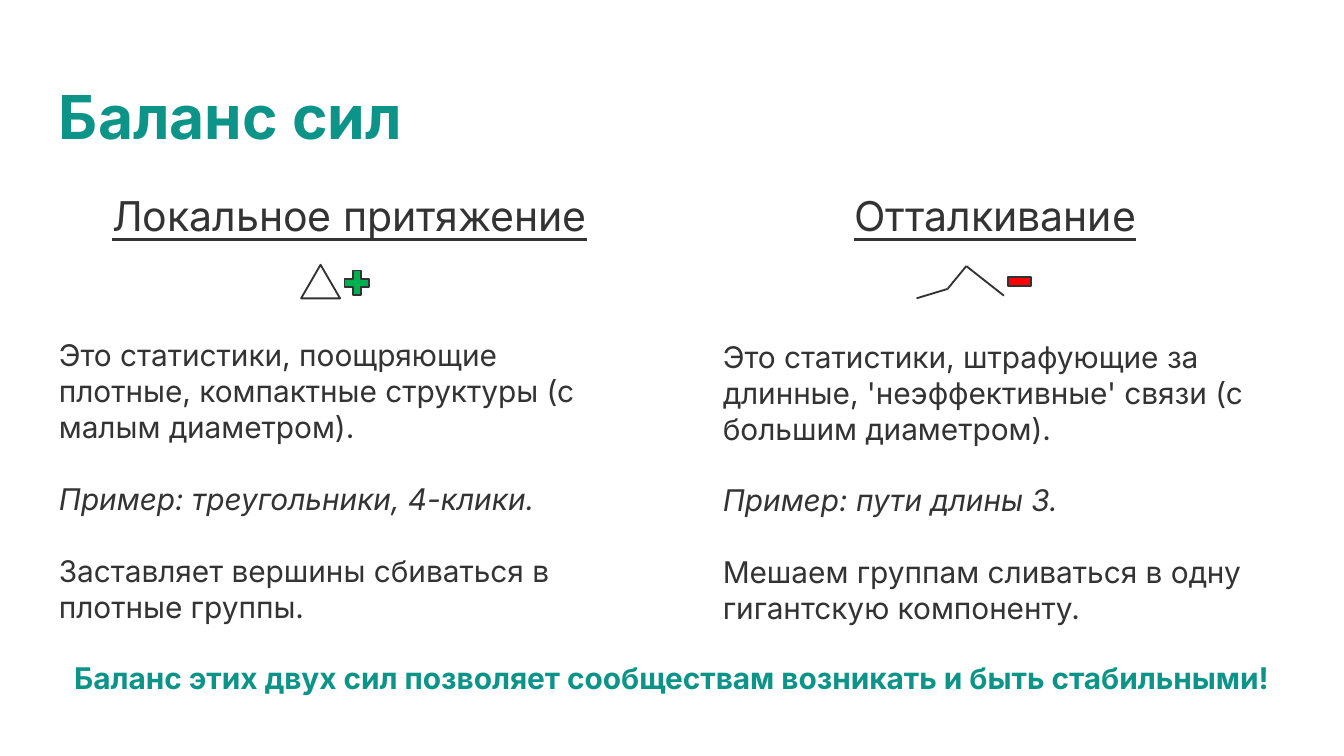
import itertools

import pptx
import pptx.dml.color
import pptx.enum.shapes
import pptx.enum.text
import pptx.oxml.ns
import pptx.util
from lxml import etree

Inches = pptx.util.Inches
RGBColor = pptx.dml.color.RGBColor
SHAPE = pptx.enum.shapes.MSO_SHAPE
CENTER = pptx.enum.text.PP_ALIGN.CENTER

TEAL = RGBColor(0x0D, 0x94, 0x88)
INK = RGBColor(0x33, 0x33, 0x33)
GREEN = RGBColor(0x00, 0xB0, 0x50)
RED = RGBColor(0xFF, 0x00, 0x00)

FONT = "Inter"
BODY_SIZE = 16
BLANK_LINE = 19.36
LEFT, WIDTH = 0.34, 9.32


def add_text(slide, box, texts, size, color, inset=0.1):
    text_box = slide.shapes.add_textbox(*map(Inches, box))
    frame = text_box.text_frame
    frame.word_wrap = True
    frame.vertical_anchor = pptx.enum.text.MSO_ANCHOR.TOP
    frame.margin_top = frame.margin_bottom = Inches(inset)
    frame.text = "\n".join(texts)
    for paragraph in frame.paragraphs:
        paragraph.font.name = FONT
        paragraph.font.size = pptx.util.Pt(size)
        paragraph.font.color.rgb = color
    return frame


def add_title(slide, box, text):
    frame = add_text(slide, box, [text], 32.4, TEAL)
    frame.paragraphs[0].font.bold = True


def add_heading(slide, box, text):
    frame = add_text(slide, box, [text], 22, INK)
    frame.margin_left = Inches(0.25)
    paragraph = frame.paragraphs[0]
    paragraph.alignment = CENTER
    paragraph.line_spacing = 1.15
    paragraph.font.underline = True


def add_description(slide, box, statistic, example, effect):
    frame = add_text(slide, box, [statistic, example, effect], BODY_SIZE, INK, 0.05)
    for paragraph in frame.paragraphs[1:]:
        paragraph.space_before = pptx.util.Pt(BLANK_LINE)
    frame.paragraphs[1].font.italic = True


def add_conclusion(slide, box, text):
    frame = add_text(slide, box, [text], BODY_SIZE, TEAL, 0.05)
    frame.paragraphs[0].alignment = CENTER
    frame.paragraphs[0].font.bold = True


def add_symbol(slide, kind, box, fill=None):
    shape = slide.shapes.add_shape(kind, *map(Inches, box))
    shape.shadow.inherit = False
    if fill is None:
        shape.fill.background()
    else:
        shape.fill.solid()
        shape.fill.fore_color.rgb = fill
    shape.line.color.rgb = INK
    shape.line.width = pptx.util.Pt(1)
    return shape


def add_edge(slide, start, end):
    connector = slide.shapes.add_connector(
        pptx.enum.shapes.MSO_CONNECTOR.STRAIGHT, *map(Inches, (*start, *end)))
    connector.line.color.rgb = INK
    connector.line.width = pptx.util.Pt(1)
    properties = connector._element.spPr
    etree.SubElement(properties, pptx.oxml.ns.qn("a:effectLst"))


def add_attraction_icon(slide, left, top):
    add_symbol(slide, SHAPE.ISOSCELES_TRIANGLE, (left, top, 0.29, 0.25))
    add_symbol(slide, SHAPE.MATH_PLUS, (left + 0.29, top + 0.01, 0.25, 0.25), GREEN)


def add_repulsion_icon(slide, left, top):
    offsets = [(0, 0.24), (0.23, 0.17), (0.37, 0), (0.65, 0.22)]
    vertices = [(left + x, top + y) for x, y in offsets]
    for start, end in itertools.pairwise(vertices):
        add_edge(slide, start, end)
    minus = add_symbol(slide, SHAPE.MATH_MINUS, (left + 0.65, top - 0.09, 0.23, 0.41), RED)
    minus.adjustments[0] = 0.152


def main():
    presentation = pptx.Presentation()
    presentation.slide_width = Inches(10)
    presentation.slide_height = Inches(10) * 9 // 16
    slide = presentation.slides.add_slide(presentation.slide_layouts[6])

    add_title(slide, (LEFT, 0.49, WIDTH, 0.63), "Баланс сил")

    add_heading(slide, (LEFT, 1.26, 4.37, 0.49), "Локальное притяжение")
    add_attraction_icon(slide, 2.24, 1.97)
    add_description(
        slide, (LEFT, 2.46, 4.37, 2.26),
        "Это статистики, поощряющие плотные, компактные структуры (с малым диаметром).",
        "Пример: треугольники, 4-клики.",
        "Заставляет вершины сбиваться в плотные группы.")

    add_heading(slide, (5, 1.26, 4.66, 0.49), "Отталкивание")
    add_repulsion_icon(slide, 6.82, 1.98)
    add_description(
        slide, (5.28, 2.47, 4.37, 2.26),
        "Это статистики, штрафующие за длинные, 'неэффективные' связи (с большим диаметром).",
        "Пример: пути длины 3.",
        "Мешаем группам сливаться в одну гигантскую компоненту.")

    add_conclusion(
        slide, (LEFT, 4.86, WIDTH, 0.37),
        "Баланс этих двух сил позволяет сообществам возникать и быть стабильными!")

    presentation.save("out.pptx")


if __name__ == "__main__":
    main()
